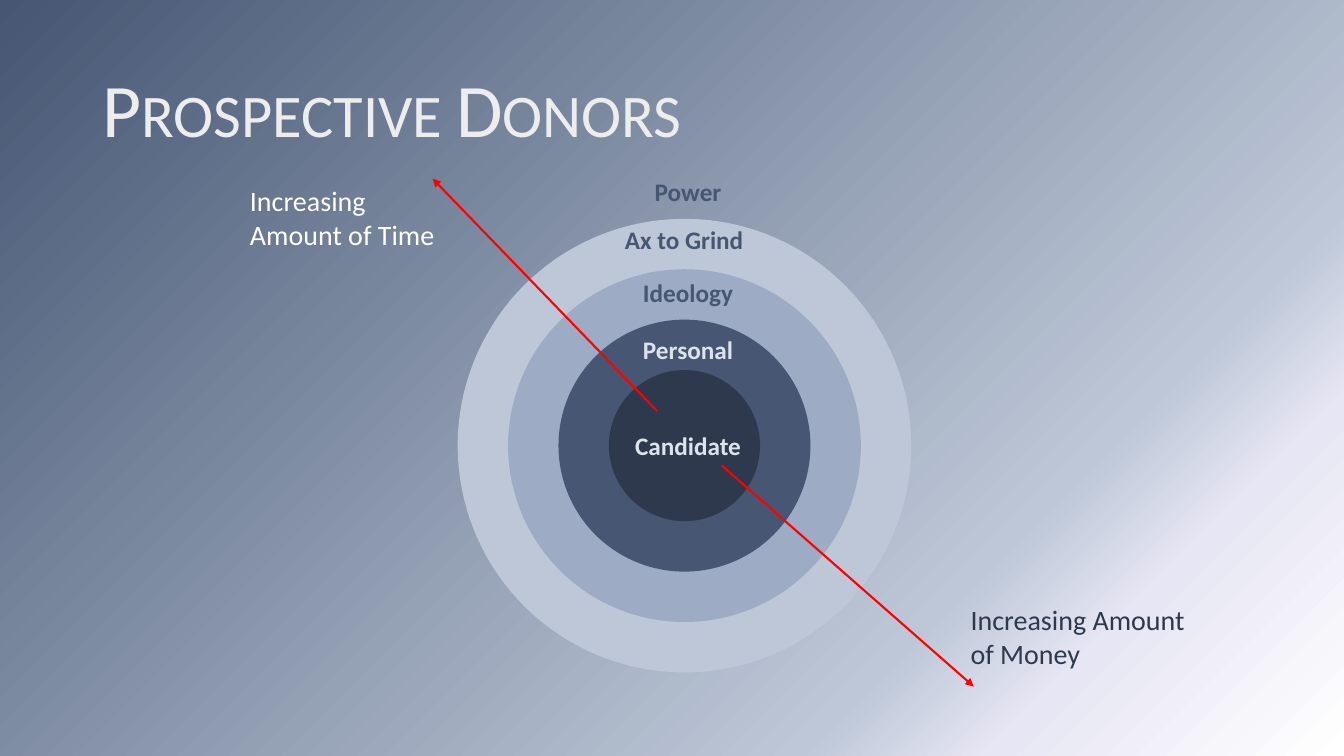
"""Build the slide on prospective donors: four rings around a candidate."""
from lxml import etree
from pptx import Presentation
from pptx.dml.color import RGBColor
from pptx.enum.shapes import MSO_CONNECTOR, MSO_SHAPE
from pptx.enum.text import MSO_ANCHOR, PP_ALIGN
from pptx.oxml.ns import qn
from pptx.util import Cm, Pt

CIRCLE = MSO_SHAPE.FLOWCHART_CONNECTOR
STRAIGHT = MSO_CONNECTOR.STRAIGHT
MIDDLE = MSO_ANCHOR.MIDDLE
LEFT, CENTER = PP_ALIGN.LEFT, PP_ALIGN.CENTER

NAVY = RGBColor(0x2E, 0x39, 0x4D)
SLATE = RGBColor(0x46, 0x56, 0x73)
BLUE = RGBColor(0x9D, 0xAB, 0xC4)
MIST = RGBColor(0xBD, 0xC7, 0xD7)
PALE = RGBColor(0xDE, 0xE3, 0xEB)
LILAC = RGBColor(0xE7, 0xE6, 0xF4)
WHITE = RGBColor(0xFF, 0xFF, 0xFF)
SILVER = RGBColor(0xED, 0xED, 0xED)
GREY = RGBColor(0xBF, 0xBF, 0xBF)
RED = RGBColor(0xFF, 0x00, 0x00)

FONT = "Calibri"
CENTER_X, CENTER_Y = 17.25, 11.23
CORE_SIZE, RING_STEP = 3.81, 2.54
LABEL_X, LABEL_WIDTH = 17.34, 3.94

BACKGROUND_STOPS = [(0, SLATE), (74, MIST), (83, LILAC), (100, WHITE)]
TITLE_STOPS = [(0, GREY), (28, SILVER), (100, WHITE)]
RINGS = [MIST, BLUE, SLATE, NAVY]
LABELS = [
    ("Power", LABEL_X, 4.32, SLATE),
    ("Ax to Grind", 17.24, 5.54, SLATE),
    ("Ideology", LABEL_X, 6.86, SLATE),
    ("Personal", LABEL_X, 8.31, PALE),
    ("Candidate", LABEL_X, 10.72, PALE),
]
ARROWS = [((18.19, 11.73), (24.54, 17.3)), ((16.56, 10.36), (10.9, 4.5))]
NOTES = [
    ("Increasing Amount of Time", 6.05, 4.5, 5.41, WHITE),
    ("Increasing Amount of Money", 24.21, 15.06, 6.07, NAVY),
]


def set_gradient(fill, owner, stops, angle):
    """Give a fill the listed stops, with the angle measured clockwise."""
    fill.gradient()
    fill.gradient_angle = 360 - angle
    stop_list = owner.element.find(".//" + qn("a:gsLst"))
    stop_list.clear()
    for percent, color in stops:
        stop = etree.SubElement(stop_list, qn("a:gs"), pos=str(percent * 1000))
        etree.SubElement(stop, qn("a:srgbClr"), val=str(color))


def add_text(page, text, left, top, width, height, size, align=LEFT):
    """Add a wrapped text box and return it with its paragraph."""
    box = page.shapes.add_textbox(Cm(left), Cm(top), Cm(width), Cm(height))
    box.text_frame.word_wrap = True
    para = box.text_frame.paragraphs[0]
    para.text = text
    para.alignment = align
    para.font.name = FONT
    para.font.size = Pt(size)
    return box, para


def add_title(page, text):
    """Add the title in small capitals with a gradient."""
    box, para = add_text(page, text, 2.33, 1.01, 29.21, 3.68, 54)
    box.text_frame.vertical_anchor = MIDDLE
    para.line_spacing = 0.9
    set_gradient(para.font.fill, box, TITLE_STOPS, 80)
    box.element.find(".//" + qn("a:defRPr")).set("cap", "small")


def add_ring(page, size, color):
    """Add a filled circle around the common centre."""
    ring = page.shapes.add_shape(
        CIRCLE, Cm(CENTER_X - size / 2), Cm(CENTER_Y - size / 2), Cm(size), Cm(size)
    )
    ring.shadow.inherit = False
    ring.fill.solid()
    ring.fill.fore_color.rgb = color
    ring.line.fill.background()


def add_label(page, text, middle, top, color):
    """Add a bold label centred on a horizontal position."""
    left = middle - LABEL_WIDTH / 2
    para = add_text(page, text, left, top, LABEL_WIDTH, 1.03, 18, CENTER)[1]
    para.font.bold = True
    para.font.color.rgb = color


def add_note(page, text, left, top, width, color):
    """Add a two-line note beside an arrow."""
    para = add_text(page, text, left, top, width, 1.97, 20)[1]
    para.font.color.rgb = color


def add_arrow(page, start, end):
    """Add a red line with an arrowhead at its end."""
    arrow = page.shapes.add_connector(STRAIGHT, *map(Cm, start + end))
    arrow.line.color.rgb = RED
    arrow.line.width = Pt(1.5)
    etree.SubElement(arrow.line._get_or_add_ln(), qn("a:tailEnd"), type="triangle")
    etree.SubElement(arrow.element.spPr, qn("a:effectLst"))


def main():
    """Build the slide and save it."""
    deck = Presentation()
    deck.slide_width, deck.slide_height = Cm(33.87), Cm(19.05)
    page = deck.slides.add_slide(deck.slide_layouts[6])
    set_gradient(page.background.fill, page, BACKGROUND_STOPS, 45)
    add_title(page, "Prospective Donors")
    for index, color in enumerate(RINGS):
        add_ring(page, CORE_SIZE + RING_STEP * (len(RINGS) - 1 - index), color)
    for label in LABELS:
        add_label(page, *label)
    for start, end in ARROWS:
        add_arrow(page, start, end)
    for note in NOTES:
        add_note(page, *note)
    deck.save("out.pptx")


if __name__ == "__main__":
    main()
